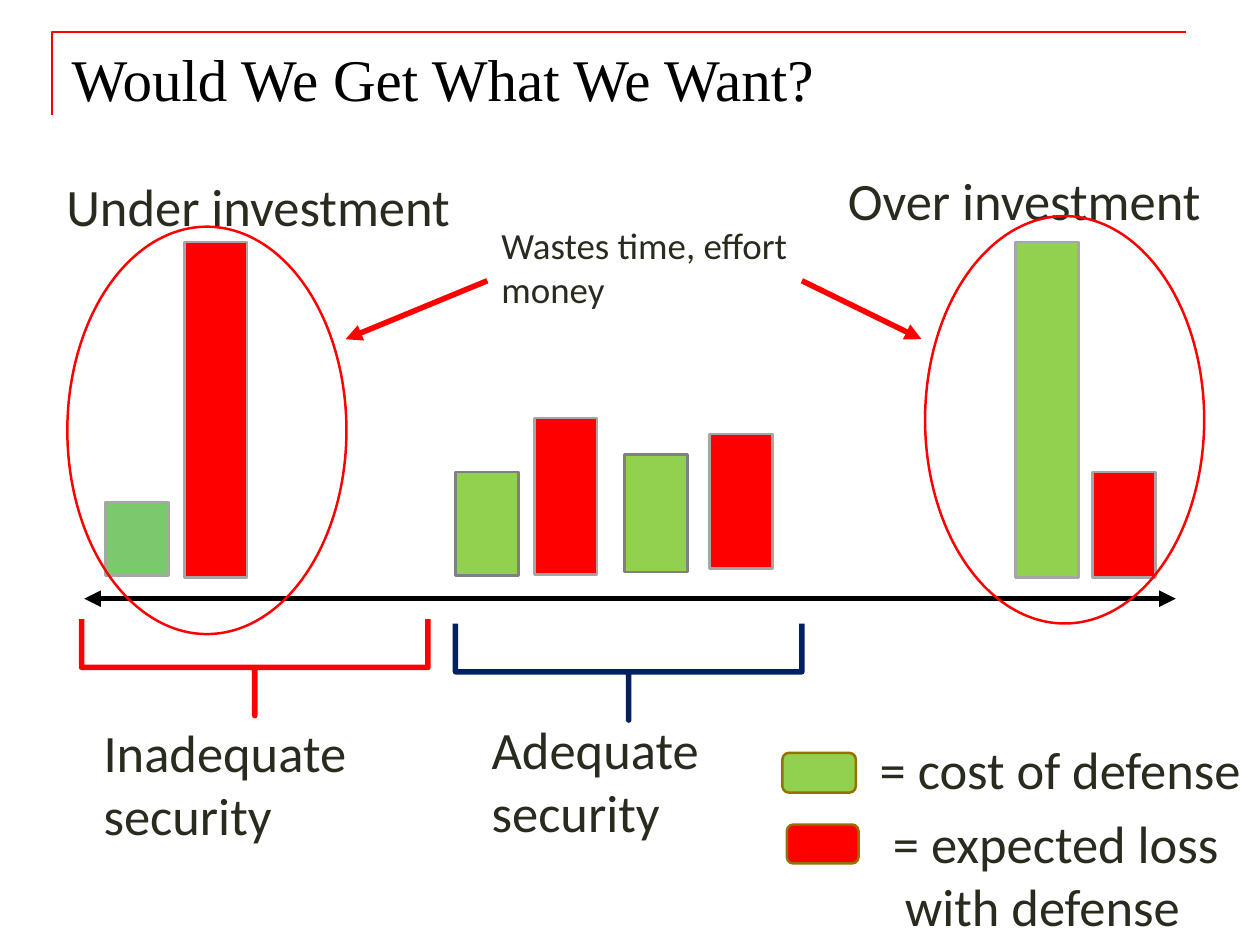
from lxml.etree import SubElement
from pptx import Presentation
from pptx.dml.color import RGBColor
from pptx.enum.shapes import MSO_CONNECTOR, MSO_SHAPE
from pptx.enum.text import MSO_ANCHOR
from pptx.oxml.ns import qn
from pptx.util import Inches, Pt

COLOURS = {
    "red": "FF0000",
    "green": "92D050",
    "soft green": "7AC96C",
    "light grey": "A6A6A6",
    "grey": "808080",
    "navy": "002060",
    "gold": "977100",
    "black": "000000",
    "ink": "282C1F",
}
BAR_WIDTH = 0.71


def colour(name):
    """Return the named palette colour."""
    return RGBColor.from_string(COLOURS[name])


def add_text(page, text, left, top, width, height, size=42.7, font="Calibri", ink="ink"):
    """Add a wrapped text box with one paragraph per line of text."""
    box = page.shapes.add_textbox(Inches(left), Inches(top), Inches(width), Inches(height))
    frame = box.text_frame
    frame.word_wrap = True
    frame.vertical_anchor = MSO_ANCHOR.TOP
    for index, line in enumerate(text.split("\n")):
        para = frame.add_paragraph() if index else frame.paragraphs[0]
        span = para.add_run()
        span.text = line
        span.font.size = Pt(size)
        span.font.name = font
        span.font.color.rgb = colour(ink)


def style_shape(shape, fill, line, weight):
    """Set the fill and outline of a shape and drop its shadow."""
    shape.shadow.inherit = False
    if fill:
        shape.fill.solid()
        shape.fill.fore_color.rgb = colour(fill)
    else:
        shape.fill.background()
    shape.line.color.rgb = colour(line)
    shape.line.width = Pt(weight)


def add_figure(page, kind, left, top, width, height, fill=None, line="red", weight=2):
    """Add a styled preset shape."""
    figure = page.shapes.add_shape(
        kind, Inches(left), Inches(top), Inches(width), Inches(height)
    )
    style_shape(figure, fill, line, weight)
    return figure


def add_bracket(page, left, top, line):
    """Add a square bracket that opens upwards."""
    bracket = add_figure(page, MSO_SHAPE.RIGHT_BRACE, left, top, 1.09, 3.91, None, line, 4.5)
    bracket.adjustments[0] = 0
    bracket.adjustments[1] = 0.5
    bracket.rotation = 90


def add_arrow(page, start, end, line, ends=("tailEnd",)):
    """Add a thick line with triangular heads at the given ends."""
    arrow = page.shapes.add_connector(
        MSO_CONNECTOR.STRAIGHT, *(Inches(value) for value in (*start, *end))
    )
    arrow.line.color.rgb = colour(line)
    arrow.line.width = Pt(4.5)
    outline = arrow.line._get_or_add_ln()
    for end_name in ends:
        SubElement(outline, qn(f"a:{end_name}"), type="triangle")
    SubElement(arrow._element.spPr, qn("a:effectLst"))


def add_title_corner(page):
    """Draw the red corner line around the title."""
    builder = page.shapes.build_freeform(Inches(0.59), Inches(1.3))
    corner = [(Inches(0.59), Inches(0.36)), (Inches(13.39), Inches(0.36))]
    builder.add_line_segments(corner, close=False)
    style_shape(builder.convert_to_shape(), None, "red", 1.5)


def main():
    """Build the slide on security investment."""
    deck = Presentation()
    deck.slide_width = Inches(14.22)
    deck.slide_height = Inches(10.67)
    page = deck.slides.add_slide(deck.slide_layouts[6])

    add_title_corner(page)
    add_text(page, "Would We Get What We Want?", 0.71, 0.43, 12.8, 1.77,
             size=48, font="Times New Roman", ink="black")

    bars = [
        (1.19, 5.67, 0.83, "soft green", "light grey"),
        (2.08, 2.73, 3.79, "red", "light grey"),
        (12.33, 5.33, 1.19, "red", "light grey"),
        (11.46, 2.73, 3.79, "green", "light grey"),
        (5.14, 5.33, 1.17, "green", "grey"),
        (6.03, 4.72, 1.77, "red", "light grey"),
        (8.01, 4.9, 1.52, "red", "light grey"),
        (7.05, 5.13, 1.33, "green", "grey"),
    ]
    for left, top, height, fill, line in bars:
        add_figure(page, MSO_SHAPE.RECTANGLE, left, top, BAR_WIDTH, height, fill, line)
    add_arrow(page, (0.95, 6.76), (13.27, 6.76), "black", ends=("headEnd", "tailEnd"))

    add_text(page, "Under investment", 0.65, 1.92, 5.65, 0.82)
    add_text(page, "Over investment", 9.47, 1.85, 4.75, 0.82)

    add_text(page, "Adequate security", 5.45, 8.05, 3.91, 1.54)
    add_bracket(page, 6.55, 5.63, "navy")
    add_text(page, "Inadequate security", 1.07, 8.08, 3.91, 1.54)
    add_bracket(page, 2.33, 5.58, "red")

    add_figure(page, MSO_SHAPE.ROUNDED_RECTANGLE, 8.83, 8.5, 0.83, 0.45, "green", "gold")
    add_text(page, "= cost of defense", 9.83, 8.27, 4.39, 0.82)
    add_figure(page, MSO_SHAPE.ROUNDED_RECTANGLE, 8.88, 9.31, 0.81, 0.44, "red", "gold")
    add_text(page, "= expected loss\n with defense", 9.98, 9.11, 4.24, 1.54)

    for left, top in ((0.76, 2.56), (10.44, 2.44)):
        add_figure(page, MSO_SHAPE.OVAL, left, top, 3.15, 4.6)
    add_arrow(page, (9.05, 3.17), (10.4, 3.83), "red")
    add_arrow(page, (5.5, 3.17), (3.9, 3.83), "red")
    add_text(page, "Wastes time, effort money", 5.56, 2.46, 3.72, 1.11, size=30)

    deck.save("out.pptx")


if __name__ == "__main__":
    main()
